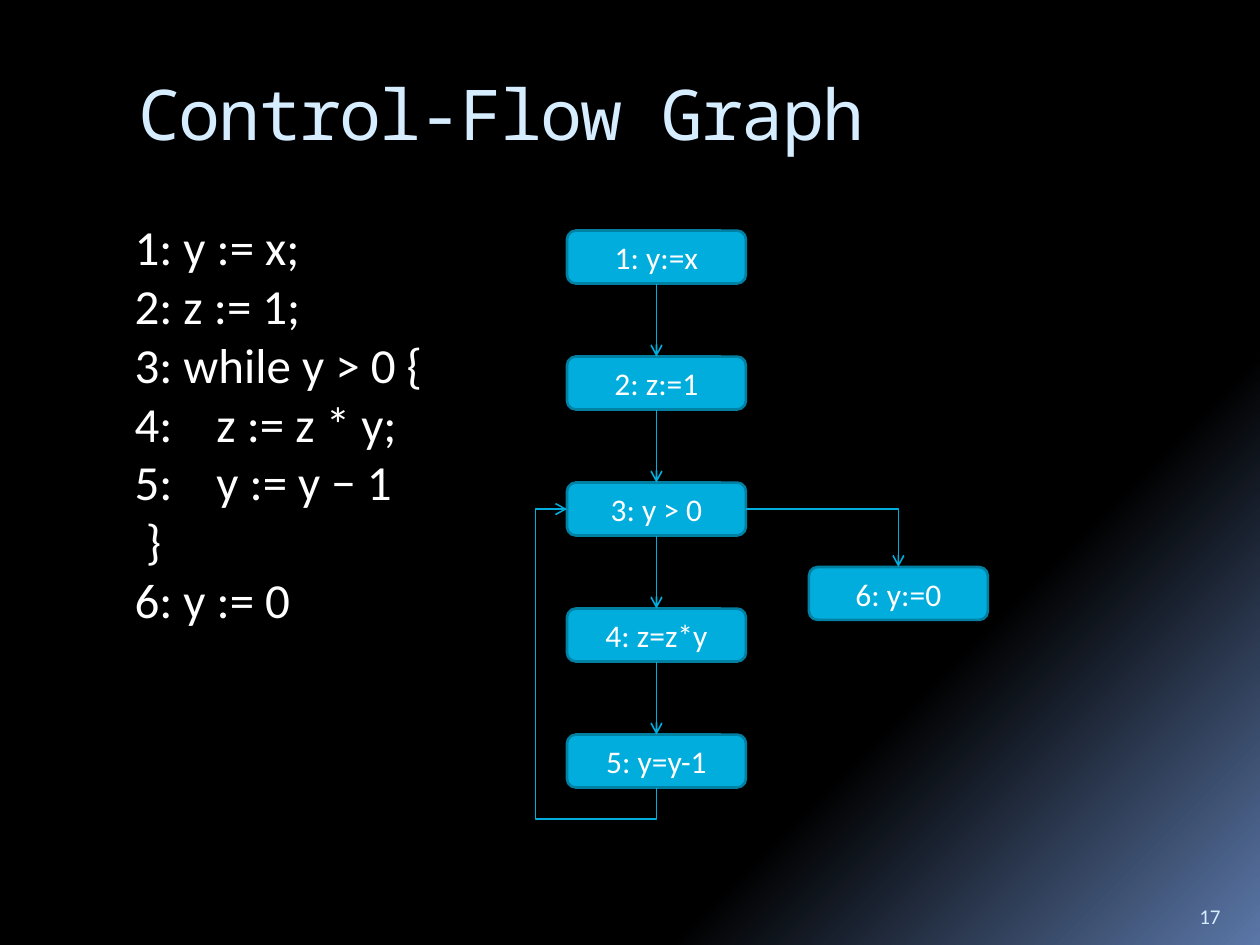
import pptx
import pptx.util
import pptx.dml.color
import pptx.enum.shapes
import pptx.enum.text
import pptx.oxml.ns
import lxml.etree

Inches, Pt = pptx.util.Inches, pptx.util.Pt
qn = pptx.oxml.ns.qn
rgb = pptx.dml.color.RGBColor.from_string
Kind = pptx.enum.shapes.MSO_CONNECTOR
Anchor = pptx.enum.text.MSO_ANCHOR
TOP, LEFT, BOTTOM, RIGHT = range(4)  # connection sites of a box

deck = pptx.Presentation()
deck.slide_width, deck.slide_height = Inches(10), Inches(7.5)
slide = deck.slides.add_slide(deck.slide_layouts[6])
shapes = slide.shapes

back = slide.background.fill
back.gradient()
back.gradient_angle = 315
for stop, place, color in zip(back.gradient_stops, (0.73, 1), ("000000", "5B77A8")):
    stop.position = place
    stop.color.rgb = rgb(color)


def write(shape, lines, size, color, face="Calibri"):
    """Fill the shape with one paragraph per line and return its text frame."""
    frame = shape.text_frame
    frame.word_wrap = True
    frame.text = "\n".join(lines)
    for par in frame.paragraphs:
        par.font.size = Pt(size)
        par.font.name = face
        par.font.color.rgb = rgb(color)
    return frame


def link(kind, start, out, end, into):
    """Join two boxes, from site to site, with an arrow."""
    line = shapes.add_connector(kind, 0, 0, 0, 0)
    line.begin_connect(start, out)
    line.end_connect(end, into)
    line.line.color.rgb = rgb("00ADDC")
    line.line.width = Pt(0.94)
    props = line._element.spPr
    lxml.etree.SubElement(props.find(qn("a:ln")), qn("a:tailEnd"), type="arrow")
    lxml.etree.SubElement(props, qn("a:effectLst"))
    return line


# Title
box = shapes.add_textbox(Inches(1), Inches(0.56), Inches(8.5), Inches(1))
title = write(box, ["Control-Flow Graph"], 40, "D6ECFF", "Noto Sans Mono")
title.margin_top = 0
title.paragraphs[0].font._rPr.set("spc", "-100")

# Program
code = ["1: y := x;", "2: z := 1;", "3: while y > 0 {", "4:\tz := z * y;",
        "5:\ty := y − 1", "}", "6: y := 0"]
box = shapes.add_textbox(Inches(0.97), Inches(1.67), Inches(2.53), Inches(3.4))
for par in write(box, code, 28, "FFFFFF").paragraphs:
    props = par._p.get_or_add_pPr()
    if "\t" in par.text:
        tabs = lxml.etree.Element(qn("a:tabLst"))
        lxml.etree.SubElement(tabs, qn("a:tab"), pos=str(Inches(0.65)), algn="l")
        props.insert(0, tabs)
    elif par.text == "}":
        props.set("marL", str(Inches(0.09)))

# Graph
labels = ["1: y:=x", "2: z:=1", "3: y > 0", "4: z=z*y", "5: y=y-1", "6: y:=0"]
spots = [(4.5, 1.83 + row) for row in range(5)] + [(6.42, 4.5)]
nodes = []
for label, (x, y) in zip(labels, spots):
    node = shapes.add_shape(pptx.enum.shapes.MSO_SHAPE.ROUNDED_RECTANGLE,
                            Inches(x), Inches(y), Inches(1.42), Inches(0.42))
    node.shadow.inherit = False
    node.fill.solid()
    node.fill.fore_color.rgb = rgb("00ADDC")
    node.line.color.rgb = rgb("0080A3")
    node.line.width = Pt(1.5)
    frame = write(node, [label], 18, "FFFFFF")
    frame.vertical_anchor = Anchor.MIDDLE
    frame.paragraphs[0].alignment = pptx.enum.text.PP_ALIGN.CENTER
    nodes.append(node)

for upper, lower in zip(nodes[:4], nodes[1:5]):
    link(Kind.STRAIGHT, upper, BOTTOM, lower, TOP)

leave = link(Kind.ELBOW, nodes[2], RIGHT, nodes[5], TOP)
leave._element.spPr.find(qn("a:prstGeom")).set("prst", "bentConnector2")

# The way back to the loop test is a four-part elbow turned by 90 degrees
loop = link(Kind.ELBOW, nodes[4], BOTTOM, nodes[2], LEFT)
loop.left, loop.top = Inches(3.75), Inches(4.79)
loop.width, loop.height = Inches(2.21), Inches(0.71)
turn = loop._element.spPr.find(qn("a:xfrm"))
turn.attrib.pop("flipV", None)
turn.set("flipH", "1")
turn.set("rot", "5400000")
bend = loop._element.spPr.find(qn("a:prstGeom"))
bend.set("prst", "bentConnector4")
guides = bend.find(qn("a:avLst"))
for name, value in (("adj1", -11300), ("adj2", 135300)):
    lxml.etree.SubElement(guides, qn("a:gd"), name=name, fmla=f"val {value}")

# Page number
box = shapes.add_textbox(Inches(9.42), Inches(7.02), Inches(0.5), Inches(0.4))
write(box, ["17"], 12, "D6ECFF").vertical_anchor = Anchor.BOTTOM

deck.save("out.pptx")
